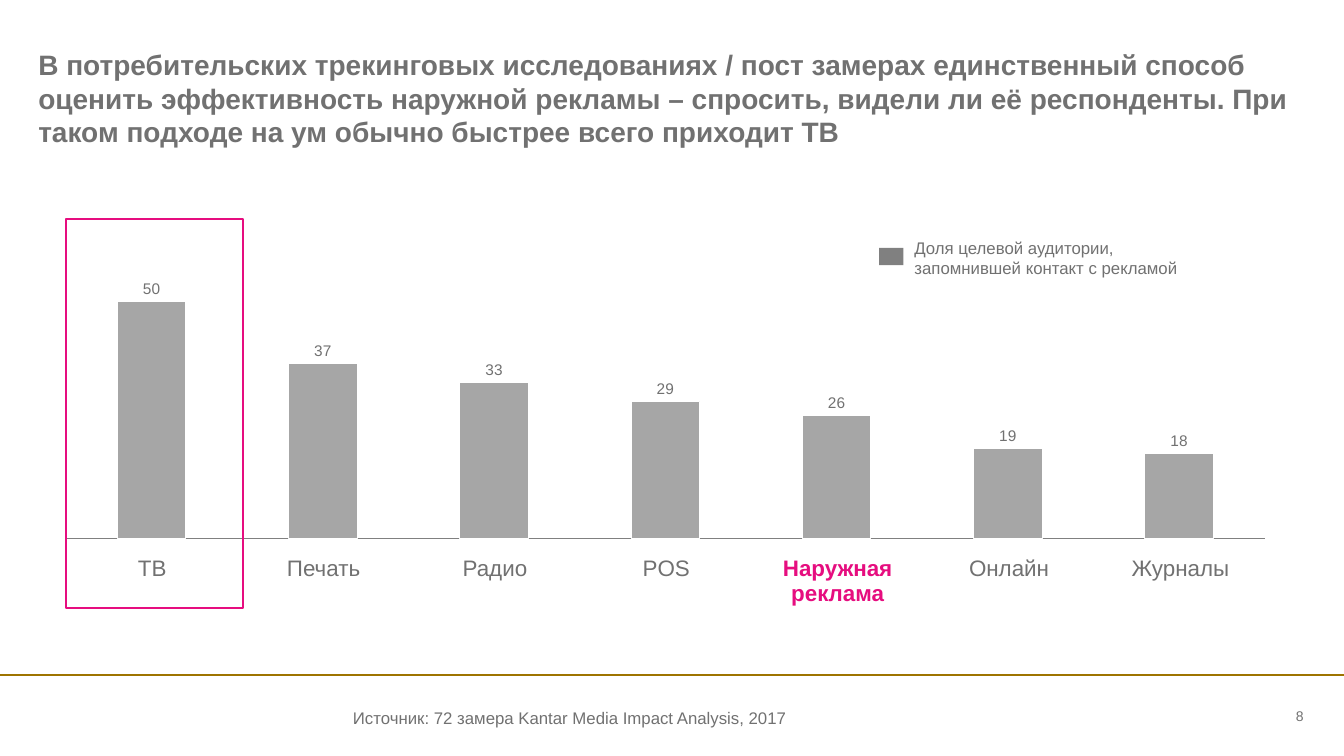
from lxml.etree import SubElement
from pptx import Presentation
from pptx.chart.data import CategoryChartData
from pptx.dml.color import RGBColor
from pptx.enum.chart import XL_CHART_TYPE as ChartType
from pptx.enum.chart import XL_LABEL_POSITION as LabelPosition
from pptx.enum.chart import XL_TICK_LABEL_POSITION as TickLabels
from pptx.enum.chart import XL_TICK_MARK as TickMark
from pptx.enum.shapes import MSO_CONNECTOR as Connector
from pptx.enum.shapes import MSO_SHAPE as Shape
from pptx.enum.text import MSO_ANCHOR as Anchor
from pptx.enum.text import PP_ALIGN as Align
from pptx.oxml import parse_xml
from pptx.oxml.ns import nsdecls, qn
from pptx.util import Inches, Pt

WIDTH, HEIGHT = Inches(13.33), Inches(7.5)
FONT = "Arial"
GREY = RGBColor(0x71, 0x71, 0x71)
BAR_GREY = RGBColor(0xA6, 0xA6, 0xA6)
KEY_GREY = RGBColor(0x80, 0x80, 0x80)
PINK = RGBColor(0xE6, 0x0D, 0x7F)
GOLD = RGBColor(0x9E, 0x74, 0x00)
WHITE = RGBColor(0xFF, 0xFF, 0xFF)

TITLE = (
    "В потребительских трекинговых исследованиях / пост замерах единственный способ "
    "оценить эффективность наружной рекламы – спросить, видели ли её респонденты. "
    "При таком подходе на ум обычно быстрее всего приходит ТВ"
)
RECALL = {
    "ТВ": 50,
    "Печать": 37,
    "Радио": 33,
    "POS": 29,
    "Наружная реклама": 26,
    "Онлайн": 19,
    "Журналы": 18,
}
HIGHLIGHT = "Наружная реклама"


def area(left, top, width, height):
    """Turn percentages of the slide's size into lengths."""
    return (int(WIDTH * left / 100), int(HEIGHT * top / 100),
            int(WIDTH * width / 100), int(HEIGHT * height / 100))


def style_font(font, size, color=GREY, bold=False):
    font.name, font.size, font.bold = FONT, Pt(size), bold
    font.color.rgb = color


def add_text(slide, box, text, size, bold=False, align=Align.LEFT, anchor=Anchor.MIDDLE):
    text_frame = slide.shapes.add_textbox(*area(*box)).text_frame
    text_frame.word_wrap = True
    text_frame.vertical_anchor = anchor
    text_frame.margin_left = text_frame.margin_right = 0
    text_frame.margin_top = text_frame.margin_bottom = 0
    text_frame.text = text
    paragraph = text_frame.paragraphs[0]
    paragraph.alignment = align
    style_font(paragraph.runs[0].font, size, bold=bold)


def add_rectangle(slide, box, fill=None, outline=None):
    shape = slide.shapes.add_shape(Shape.RECTANGLE, *area(*box))
    shape.shadow.inherit = False
    if fill is None:
        shape.fill.background()
    else:
        shape.fill.solid()
        shape.fill.fore_color.rgb = fill
    if outline is None:
        shape.line.fill.background()
    else:
        shape.line.color.rgb = outline
        shape.line.width = Pt(1.5)


def add_rule(slide, top):
    y = int(HEIGHT * top / 100)
    rule = slide.shapes.add_connector(Connector.STRAIGHT, 0, y, WIDTH, y)
    rule.line.color.rgb = GOLD
    rule.line.width = Pt(1.5)
    SubElement(rule._element.spPr, qn("a:effectLst"))


def set_plot_area(chart, **shares):
    parts = "".join(f'<c:{name} val="{share}"/>' for name, share in shares.items())
    plot_area = chart._chartSpace.chart.plotArea
    for layout in plot_area.findall(qn("c:layout")):
        plot_area.remove(layout)
    plot_area.insert(0, parse_xml(
        f'<c:layout {nsdecls("c")}><c:manualLayout><c:layoutTarget val="inner"/>'
        f'<c:xMode val="edge"/><c:yMode val="edge"/>{parts}</c:manualLayout></c:layout>'))


def add_recall_chart(slide, box):
    data = CategoryChartData()
    data.categories = [str(number) for number in range(1, len(RECALL) + 1)]
    data.add_series("Series 1", RECALL.values())
    chart = slide.shapes.add_chart(ChartType.COLUMN_CLUSTERED, *area(*box), data).chart
    chart.has_legend = chart.has_title = False
    style_font(chart.font, 18)
    set_plot_area(chart, x=0, y=0.12, w=1, h=0.71)

    # Axes
    value_axis, category_axis = chart.value_axis, chart.category_axis
    value_axis.minimum_scale, value_axis.maximum_scale = 0, 60
    value_axis.has_major_gridlines = False
    value_axis.visible = False
    category_axis.tick_label_position = TickLabels.NONE
    category_axis.major_tick_mark = TickMark.NONE
    category_axis.format.line.color.rgb = KEY_GREY
    category_axis.format.line.width = Pt(0.75)

    # Bars and their values
    plot = chart.plots[0]
    plot.gap_width = 150
    plot.vary_by_categories = False
    bars = plot.series[0].format
    bars.fill.solid()
    bars.fill.fore_color.rgb = BAR_GREY
    bars.line.color.rgb = WHITE
    bars.line.width = Pt(0.75)
    plot.has_data_labels = True
    labels = plot.data_labels
    labels.show_value = True
    labels.position = LabelPosition.OUTSIDE_END
    style_font(labels.font, 11)


def set_borders(cell, color):
    properties = cell._tc.get_or_add_tcPr()
    for side in ("lnL", "lnR", "lnT", "lnB"):
        line = SubElement(properties, qn(f"a:{side}"), w=str(Pt(1)))
        fill = SubElement(line, qn("a:solidFill"))
        SubElement(fill, qn("a:srgbClr"), val=str(color))


def add_media_names(slide, box):
    table = slide.shapes.add_table(1, len(RECALL), *area(*box)).table
    table.first_row = table.horz_banding = False
    for cell, name in zip(table.rows[0].cells, RECALL):
        set_borders(cell, WHITE)
        cell.fill.background()
        cell.margin_left = cell.margin_right = cell.margin_top = Inches(0.01)
        cell.margin_bottom = 0
        cell.text_frame.text = name
        paragraph = cell.text_frame.paragraphs[0]
        paragraph.alignment = Align.CENTER
        chosen = name == HIGHLIGHT
        style_font(paragraph.runs[0].font, 16, PINK if chosen else GREY, chosen)


def main():
    presentation = Presentation()
    presentation.slide_width, presentation.slide_height = WIDTH, HEIGHT
    slide = presentation.slides.add_slide(presentation.slide_layouts[6])

    # Footer rule and title
    add_rule(slide, 89.33)
    add_text(slide, (2.85, 6.27, 94.07, 14.8), TITLE, 20, bold=True, anchor=Anchor.TOP)

    # Chart with media names below
    add_recall_chart(slide, (4.88, 27.33, 89.27, 52.93))
    add_media_names(slide, (4.95, 73.47, 89.27, 7.2))

    # Legend
    add_text(slide, (68.04, 32, 20.63, 4.13),
             "Доля целевой аудитории, запомнившей контакт с рекламой", 12)
    add_rectangle(slide, (65.42, 32.8, 1.8, 2.27), fill=KEY_GREY)

    # Frame around the leading medium
    add_rectangle(slide, (4.88, 28.93, 13.2, 51.47), outline=PINK)

    # Footer
    add_text(slide, (89.05, 93.2, 7.95, 2.93), "8", 10, align=Align.RIGHT)
    add_text(slide, (26.26, 92.93, 52.74, 4.13),
             "Источник: 72 замера Kantar Media Impact Analysis, 2017", 12)

    presentation.save("out.pptx")


if __name__ == "__main__":
    main()
